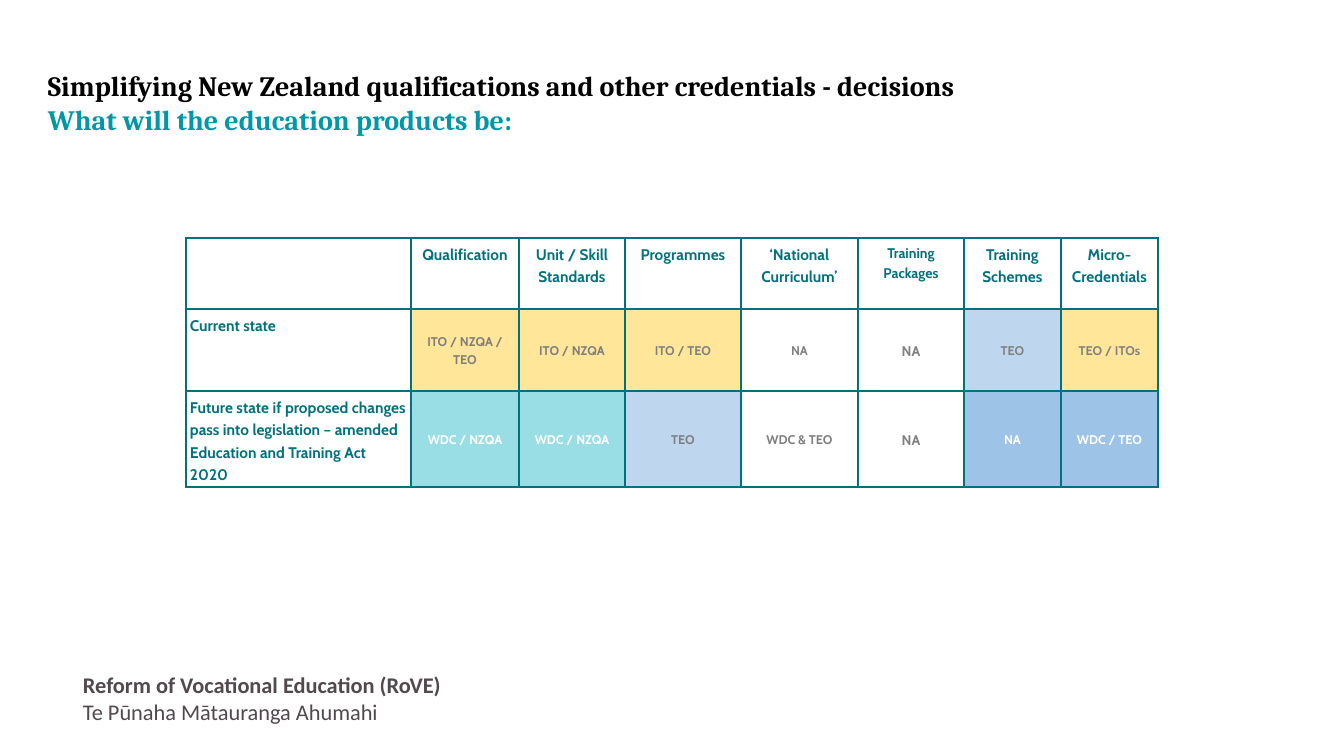
from lxml.etree import SubElement
from pptx import Presentation
from pptx.dml.color import RGBColor
from pptx.enum.text import MSO_ANCHOR, PP_ALIGN
from pptx.oxml.ns import qn
from pptx.util import Emu, Pt

COLOURS = {
    "black": "000000",
    "white": "FFFFFF",
    "teal": "00717D",
    "title teal": "0097A7",
    "footer": "51494E",
    "ash": "7E7E7E",
    "grey": "808080",
    "yellow": "FFE699",
    "aqua": "99DEE5",
    "pale blue": "BED7EF",
    "blue": "9DC3E6",
}
COLUMN_WIDTHS = [225, 108, 106, 116, 117, 106, 97, 97]
ROW_HEIGHTS = [71, 82, 96]
HEADINGS = [
    ("", 11),
    ("Qualification", 11),
    ("Unit / Skill Standards", 11),
    ("Programmes", 11),
    ("‘National Curriculum’", 11),
    ("Training Packages", 10),
    ("Training Schemes", 11),
    ("Micro-Credentials", 11),
]
STATES = {
    "Current state": [
        ("ITO / NZQA / TEO", "yellow", "ash", 9),
        ("ITO / NZQA", "yellow", "ash", 9),
        ("ITO / TEO", "yellow", "grey", 9),
        ("NA", "white", "grey", 9),
        ("NA", "white", "grey", 10),
        ("TEO", "pale blue", "grey", 9),
        ("TEO / ITOs", "yellow", "grey", 9),
    ],
    "Future state if proposed changes pass into legislation – amended Education and Training Act 2020": [
        ("WDC / NZQA", "aqua", "white", 9),
        ("WDC / NZQA", "aqua", "white", 9),
        ("TEO", "pale blue", "ash", 9),
        ("WDC & TEO", "white", "ash", 9),
        ("NA", "white", "grey", 10),
        ("NA", "blue", "white", 9),
        ("WDC / TEO", "blue", "white", 9),
    ],
}


def px(length):
    return Emu(round(length * 914400 / 100.8))


def colour(name):
    return RGBColor.from_string(COLOURS[name])


class SlideBuilder:
    table_font = "Cabin"
    border_width = Pt(2.25)
    line_spacing = 1.19

    def __init__(self, deck):
        self.page = deck.slides.add_slide(deck.slide_layouts[6])

    def style(self, font, family, size, tone, bold=True):
        font.name = family
        font.size = Pt(size)
        font.bold = bold
        font.color.rgb = colour(tone)

    def text(self, left, top, width, height, inset, family, size, lines):
        box = self.page.shapes.add_textbox(px(left), px(top), px(width), px(height))
        frame = box.text_frame
        frame.word_wrap = True
        frame.margin_left = frame.margin_right = px(inset)
        frame.margin_top = frame.margin_bottom = px(inset)
        frame.text = "\n".join(words for words, tone, bold in lines)
        for para, (words, tone, bold) in zip(frame.paragraphs, lines):
            self.style(para.runs[0].font, family, size, tone, bold)

    def table(self, left, top, widths, heights):
        frame = self.page.shapes.add_table(
            len(heights), len(widths), px(left), px(top), px(sum(widths)), px(sum(heights))
        )
        grid = frame.table
        grid.first_row = grid.horz_banding = False
        for column, width in zip(grid.columns, widths):
            column.width = px(width)
        for row, height in zip(grid.rows, heights):
            row.height = px(height)
        return grid

    def borders(self, cell):
        properties = cell._tc.get_or_add_tcPr()
        for side in ("a:lnL", "a:lnR", "a:lnT", "a:lnB"):
            line = SubElement(properties, qn(side), w=str(self.border_width))
            solid = SubElement(line, qn("a:solidFill"))
            SubElement(solid, qn("a:srgbClr"), val=COLOURS["teal"])

    def cell(self, cell, words, size=11, tone="teal", fill=None, centred=True, after=0):
        self.borders(cell)
        if fill:
            cell.fill.solid()
            cell.fill.fore_color.rgb = colour(fill)
            cell.vertical_anchor = MSO_ANCHOR.MIDDLE
        else:
            cell.fill.background()
        cell.margin_left = cell.margin_right = px(4)
        cell.margin_top = cell.margin_bottom = px(4)
        cell.text_frame.text = words
        para = cell.text_frame.paragraphs[0]
        para.alignment = PP_ALIGN.CENTER if centred else PP_ALIGN.LEFT
        para.line_spacing = self.line_spacing
        para.space_after = Pt(after)
        for font in [para.font] + [span.font for span in para.runs]:
            self.style(font, self.table_font, size, tone)


def main():
    deck = Presentation()
    deck.slide_width, deck.slide_height = px(1344), px(756)
    slide = SlideBuilder(deck)

    slide.text(83, 671, 703, 62, 0, "Calibri", 16, [
        ("Reform of Vocational Education (RoVE)", "footer", True),
        ("Te Pūnaha Mātauranga Ahumahi", "footer", False),
    ])

    grid = slide.table(186, 238, COLUMN_WIDTHS, ROW_HEIGHTS)
    for column, (heading, size) in enumerate(HEADINGS):
        slide.cell(grid.cell(0, column), heading, size)
    for row, (state, products) in enumerate(STATES.items(), 1):
        slide.cell(grid.cell(row, 0), state, centred=False, after=6)
        for column, (words, fill, tone, size) in enumerate(products, 1):
            slide.cell(grid.cell(row, column), words, size, tone, fill, after=6)

    slide.text(44, 65, 1061, 75, 4, "Cambria", 20, [
        ("Simplifying New Zealand qualifications and other credentials - decisions", "black", True),
        ("What will the education products be:", "title teal", True),
    ])
    deck.save("out.pptx")


if __name__ == "__main__":
    main()
